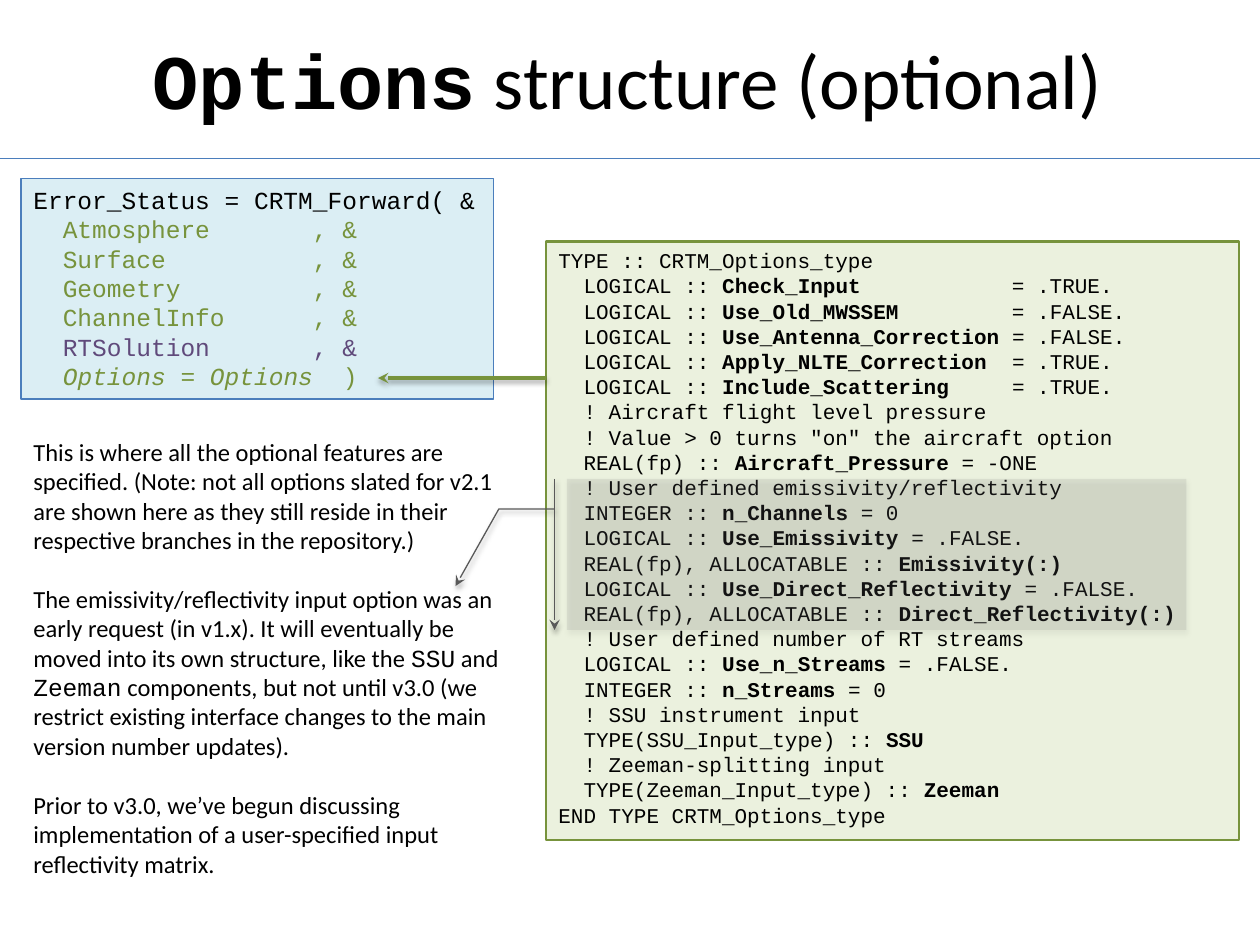
import pptx
import pptx.dml.color
import pptx.enum.shapes
import pptx.enum.text
import pptx.oxml
import pptx.oxml.ns
import pptx.util
from dataclasses import dataclass


@dataclass(frozen=True)
class Theme:
    body: str = "Calibri"
    code: str = "Courier New"
    title_size: int = 44
    text_size: int = 14
    listing_size: int = 12
    leading: float = 1.2
    black: str = "000000"
    blue: str = "4B7EBC"
    pale_blue: str = "DBEEF4"
    green: str = "77933C"
    pale_green: str = "EBF1DE"
    purple: str = "604A7B"
    grey: str = "808080"
    dark_grey: str = "595959"


THEME = Theme()
PX = 7620
MARK = "*"

TITLE = "*Options* structure (optional)"
CALL = [
    ("Error_Status = CRTM_Forward( &", THEME.black),
    ("  Atmosphere       , &", THEME.green),
    ("  Surface          , &", THEME.green),
    ("  Geometry         , &", THEME.green),
    ("  ChannelInfo      , &", THEME.green),
    ("  RTSolution       , &", THEME.purple),
    ("  *Options = Options  *)", THEME.green),
]
NOTES = [
    "This is where all the optional features are specified. (Note: not all options slated for v2.1 "
    "are shown here as they still reside in their respective branches in the repository.)",
    "The emissivity/reflectivity input option was an early request (in v1.x). It will eventually be "
    "moved into its own structure, like the *SSU* and *Zeeman* components, but not until v3.0 "
    "(we restrict existing interface changes to the main version number updates).",
    "Prior to v3.0, we’ve begun discussing implementation of a user-specified input reflectivity matrix.",
]
LISTING = [
    "TYPE :: CRTM_Options_type",
    "  LOGICAL :: *Check_Input*            = .TRUE.",
    "  LOGICAL :: *Use_Old_MWSSEM*         = .FALSE.",
    "  LOGICAL :: *Use_Antenna_Correction* = .FALSE.",
    "  LOGICAL :: *Apply_NLTE_Correction*  = .TRUE.",
    "  LOGICAL :: *Include_Scattering*     = .TRUE.",
    "  ! Aircraft flight level pressure",
    '  ! Value > 0 turns "on" the aircraft option',
    "  REAL(fp) :: *Aircraft_Pressure* = -ONE",
    "  ! User defined emissivity/reflectivity",
    "  INTEGER :: *n_Channels* = 0",
    "  LOGICAL :: *Use_Emissivity* = .FALSE.",
    "  REAL(fp), ALLOCATABLE :: *Emissivity(:)*",
    "  LOGICAL :: *Use_Direct_Reflectivity* = .FALSE.",
    "  REAL(fp), ALLOCATABLE :: *Direct_Reflectivity(:)*",
    "  ! User defined number of RT streams",
    "  LOGICAL :: *Use_n_Streams* = .FALSE.",
    "  INTEGER :: *n_Streams* = 0",
    "  ! SSU instrument input",
    "  TYPE(SSU_Input_type) :: *SSU*",
    "  ! Zeeman-splitting input",
    "  TYPE(Zeeman_Input_type) :: *Zeeman*",
    "END TYPE CRTM_Options_type",
]

TITLE_BOX = (138, 0, 920, 150)
CALL_BOX = (20, 170, 450, 210)
NOTES_BOX = (20, 410, 490, 440)
LISTING_BOX = (520, 230, 660, 570)
CALLOUT_BOX = (540, 456, 590, 144)
CALLOUT_BENDS = (0.2, -0.02, 0.2, -0.11, 0.71, -0.18)
RULE = (0, 151, 1200, 151)
ARROW = (520, 360, 360, 360)


def emu(lengths):
    return [length * PX for length in lengths]


def rgb(colour):
    return pptx.dml.color.RGBColor.from_string(colour)


def xml(markup):
    head, tail = markup.split(" ", 1)
    return pptx.oxml.parse_xml(f"{head} {pptx.oxml.ns.nsdecls('a')} {tail}")


def write(paragraph, text, font, size, colour, emphasis):
    for index, part in enumerate(text.split(MARK)):
        if part:
            run = paragraph.add_run()
            run.text = part
            if index % 2:
                for name, value in emphasis.items():
                    setattr(run.font, name, value)
    paragraph.font.name = font
    paragraph.font.size = pptx.util.Pt(size)
    paragraph.font.color.rgb = rgb(colour)


def fill_text(shape, lines, font, size, emphasis, gap=0):
    frame = shape.text_frame
    frame.word_wrap = True
    frame.vertical_anchor = pptx.enum.text.MSO_ANCHOR.TOP
    for index, (text, colour) in enumerate(lines):
        paragraph = frame.add_paragraph() if index else frame.paragraphs[0]
        paragraph.alignment = pptx.enum.text.PP_ALIGN.LEFT
        paragraph.line_spacing = pptx.util.Pt(size * THEME.leading)
        if index and gap:
            paragraph.space_before = pptx.util.Pt(gap)
        write(paragraph, text, font, size, colour, emphasis)


def set_line(shape, colour, width, arrow=False):
    shape.line.color.rgb = rgb(colour)
    shape.line.width = pptx.util.Pt(width)
    if arrow:
        shape.line._get_or_add_ln().append(xml('<a:tailEnd type="stealth"/>'))


def set_shadow(shape, opacity=0):
    shadow = (
        f'<a:outerShdw blurRad="39400" dist="21600" dir="5400000" rotWithShape="0">'
        f'<a:srgbClr val="{THEME.black}"><a:alpha val="{opacity * 1000}"/></a:srgbClr></a:outerShdw>'
    ) if opacity else ""
    shape._element.spPr.append(xml(f"<a:effectLst >{shadow}</a:effectLst>"))


def add_box(slide, kind, box, fill, line, width, arrow=False):
    shape = slide.shapes.add_shape(kind, *emu(box))
    shape.fill.solid()
    shape.fill.fore_color.rgb = rgb(fill)
    set_line(shape, line, width, arrow)
    return shape


def add_line(slide, ends, colour, width, arrow=False, shadow=0):
    connector = slide.shapes.add_connector(pptx.enum.shapes.MSO_CONNECTOR.STRAIGHT, *emu(ends))
    set_line(connector, colour, width, arrow)
    set_shadow(connector, shadow)


def add_title(slide):
    title = slide.shapes.title
    title.left, title.top, title.width, title.height = emu(TITLE_BOX)
    frame = title.text_frame
    frame.margin_left = frame.margin_right = 0
    frame.vertical_anchor = pptx.enum.text.MSO_ANCHOR.MIDDLE
    frame.paragraphs[0].alignment = pptx.enum.text.PP_ALIGN.CENTER
    write(frame.paragraphs[0], TITLE, THEME.body, THEME.title_size, THEME.black,
          {"name": THEME.code, "bold": True})


def main():
    presentation = pptx.Presentation()
    presentation.slide_width, presentation.slide_height = emu((1200, 900))
    slide = presentation.slides.add_slide(presentation.slide_layouts[5])
    shapes = pptx.enum.shapes.MSO_SHAPE

    add_line(slide, RULE, THEME.blue, 0.75)
    add_title(slide)

    call = add_box(slide, shapes.RECTANGLE, CALL_BOX, THEME.pale_blue, THEME.blue, 1)
    call.shadow.inherit = False
    fill_text(call, CALL, THEME.code, THEME.text_size, {"italic": True})

    notes = slide.shapes.add_textbox(*emu(NOTES_BOX))
    fill_text(notes, [(text, THEME.black) for text in NOTES], THEME.body, THEME.text_size,
              {"name": THEME.code}, gap=THEME.text_size * THEME.leading)

    listing = add_box(slide, shapes.RECTANGLE, LISTING_BOX, THEME.pale_green, THEME.green, 1.5)
    listing.shadow.inherit = False
    fill_text(listing, [(text, THEME.black) for text in LISTING], THEME.code, THEME.listing_size,
              {"bold": True})

    add_line(slide, ARROW, THEME.green, 2, arrow=True, shadow=38)

    callout = add_box(slide, shapes.LINE_CALLOUT_2_ACCENT_BAR, CALLOUT_BOX, THEME.grey,
                      THEME.dark_grey, 0.75, arrow=True)
    for index, bend in enumerate(CALLOUT_BENDS):
        callout.adjustments[index] = bend
    fill_colour = callout._element.spPr.find(pptx.oxml.ns.qn("a:solidFill"))[0]
    fill_colour.append(xml('<a:alpha val="15000"/>'))
    set_shadow(callout, 35)

    presentation.save("out.pptx")


if __name__ == "__main__":
    main()
